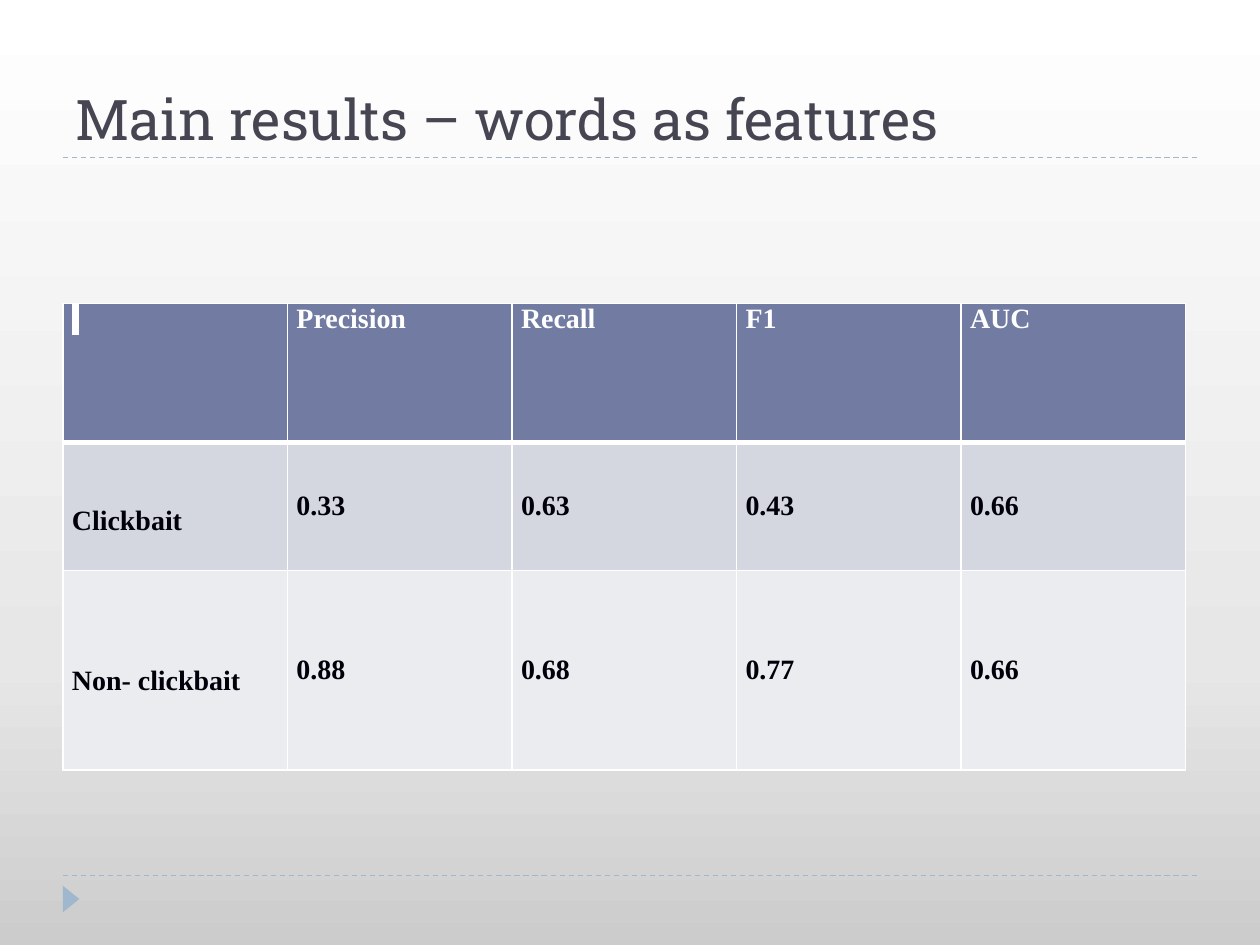
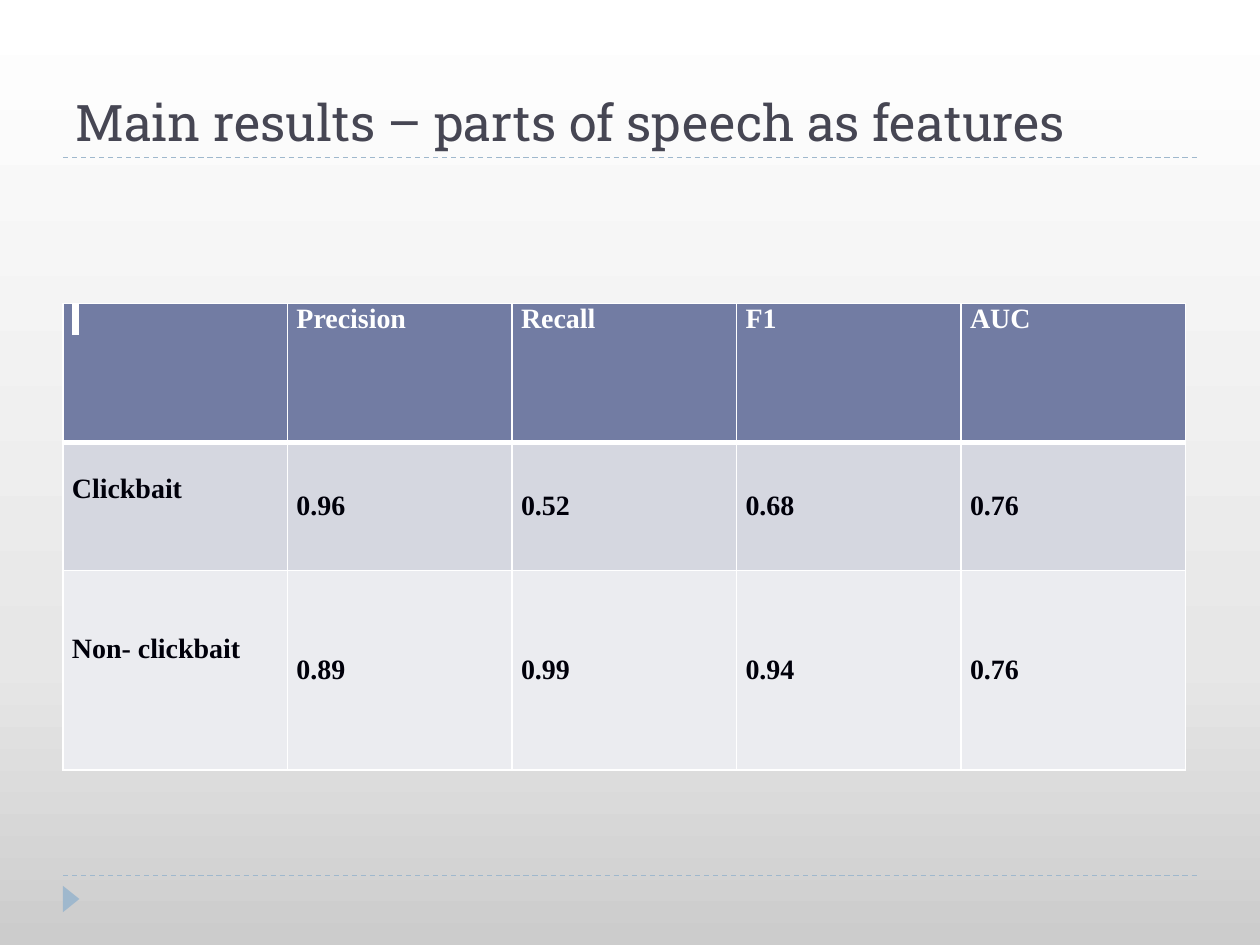
from copy import deepcopy
from dataclasses import dataclass

from lxml import etree
from pptx import Presentation
from pptx.dml.color import RGBColor
from pptx.enum.dml import MSO_LINE
from pptx.enum.shapes import MSO_CONNECTOR, MSO_SHAPE
from pptx.enum.text import MSO_ANCHOR
from pptx.oxml.ns import qn
from pptx.util import Length, Pt

DASH = MSO_LINE.DASH
STRAIGHT = MSO_CONNECTOR.STRAIGHT
TRIANGLE = MSO_SHAPE.ISOSCELES_TRIANGLE
TOP, MIDDLE, BOTTOM = MSO_ANCHOR.TOP, MSO_ANCHOR.MIDDLE, MSO_ANCHOR.BOTTOM

WHITE = RGBColor(0xFF, 0xFF, 0xFF)
TITLE_INK = RGBColor(0x46, 0x46, 0x53)
CELL_INK = RGBColor(0x00, 0x00, 0x0A)
ACCENT = RGBColor(0x9F, 0xB8, 0xCD)
HEADER_FILL = RGBColor(0x72, 0x7C, 0xA3)
ROW_FILLS = (RGBColor(0xD5, 0xD7, 0xE0), RGBColor(0xEB, 0xEC, 0xF0))
BACKGROUND_STOPS = (
    (0.0, RGBColor(0xCC, 0xCC, 0xCC)),
    (0.3, RGBColor(0xE7, 0xE7, 0xE7)),
    (1.0, WHITE),
)

TITLE_FONT = "Roboto Slab"
TABLE_FONT = "Times New Roman"
MARGIN = Pt(36)
CONTENT_WIDTH = Pt(648)
RULE_TOPS = (Pt(90), Pt(500.4))
TABLE_TOP = Pt(173.5)
COLUMN_WIDTH = Pt(128.3)
ROW_HEIGHTS = (Pt(79.2), Pt(73.4), Pt(113.8))
CELL_INSET = Pt(5.15)
LINE_PITCH = Pt(18)
THIN, THICK = Pt(1), Pt(3)
METRICS = ("Precision", "Recall", "F1", "AUC")


@dataclass(frozen=True)
class ClassScores:
    label: str
    lines_above: int
    scores: tuple[str, ...]


@dataclass(frozen=True)
class ResultSlide:
    title: str
    title_size: Length
    classes: tuple[ClassScores, ...]


RESULTS = (
    ResultSlide("Main results – words as features", Pt(32), (
        ClassScores("Clickbait", 2, ("0.33", "0.63", "0.43", "0.66")),
        ClassScores("Non- clickbait", 3, ("0.88", "0.68", "0.77", "0.66")),
    )),
    ResultSlide("Main results – parts of speech as features", Pt(28.8), (
        ClassScores("Clickbait", 1, ("0.96", "0.52", "0.68", "0.76")),
        ClassScores("Non- clickbait", 2, ("0.89", "0.99", "0.94", "0.76")),
    )),
)


def apply_format(target, values: dict) -> None:
    for attribute, value in values.items():
        setattr(target, attribute, value)


def paint_background(slide) -> None:
    fill = slide.background.fill
    fill.gradient()
    fill.gradient_angle = 90
    last_stop = slide.background._cSld.findall(".//" + qn("a:gs"))[-1]
    last_stop.addnext(deepcopy(last_stop))
    for stop, (position, color) in zip(fill.gradient_stops, BACKGROUND_STOPS):
        stop.position = position
        stop.color.rgb = color


def add_frame(slide) -> None:
    """Draw the two dashed rules and the footer marker."""
    for top in RULE_TOPS:
        rule = slide.shapes.add_connector(
            STRAIGHT, MARGIN, top, MARGIN + CONTENT_WIDTH, top)
        rule.line.color.rgb = ACCENT
        apply_format(rule.line, {"width": Pt(0.75), "dash_style": DASH})
        etree.SubElement(rule._element.spPr, qn("a:effectLst"))
    marker = slide.shapes.add_shape(
        TRIANGLE, Pt(33.1), Pt(509), Pt(15.1), Pt(9.4))
    marker.rotation = 90
    marker.shadow.inherit = False
    marker.fill.solid()
    marker.fill.fore_color.rgb = ACCENT
    marker.line.fill.background()


def add_title(slide, text: str, size: Length) -> None:
    title = slide.shapes.add_textbox(MARGIN, Pt(12.2), CONTENT_WIDTH, Pt(77.8))
    frame = title.text_frame
    apply_format(frame, {"word_wrap": True, "vertical_anchor": BOTTOM})
    run = frame.paragraphs[0].add_run()
    run.text = text
    apply_format(run.font, {"name": TITLE_FONT, "size": size})
    run.font.color.rgb = TITLE_INK


def add_border(cell, side: str, width: Length) -> None:
    border = etree.SubElement(
        cell._tc.get_or_add_tcPr(), qn(f"a:ln{side}"), w=str(int(width)))
    fill = etree.SubElement(border, qn("a:solidFill"))
    etree.SubElement(fill, qn("a:srgbClr"), val=str(WHITE))


def highlight(run) -> None:
    """Give the run a white text highlight."""
    mark = etree.Element(qn("a:highlight"))
    etree.SubElement(mark, qn("a:srgbClr"), val=str(WHITE))
    run.font._element.find(qn("a:latin")).addprevious(mark)


def fill_cell(cell, text: str, fill: RGBColor, ink: RGBColor,
              anchor=TOP, inset_top: Length = Pt(0),
              top_border: Length = THIN, bottom_border: Length = THIN):
    for side, width in (("L", THIN), ("R", THIN),
                        ("T", top_border), ("B", bottom_border)):
        add_border(cell, side, width)
    cell.fill.solid()
    cell.fill.fore_color.rgb = fill
    apply_format(cell, {
        "margin_left": CELL_INSET, "margin_right": CELL_INSET,
        "margin_top": inset_top, "margin_bottom": Pt(0),
        "vertical_anchor": anchor,
    })
    run = cell.text_frame.paragraphs[0].add_run()
    run.text = text
    apply_format(run.font, {"name": TABLE_FONT, "size": Pt(16), "bold": True})
    run.font.color.rgb = ink
    return run


def add_score_table(slide, classes: tuple[ClassScores, ...]) -> None:
    column_count = len(METRICS) + 1
    table = slide.shapes.add_table(
        len(ROW_HEIGHTS), column_count, MARGIN, TABLE_TOP,
        COLUMN_WIDTH * column_count, sum(ROW_HEIGHTS)).table
    for column in table.columns:
        column.width = COLUMN_WIDTH
    for row, height in zip(table.rows, ROW_HEIGHTS):
        row.height = height

    header_runs = [
        fill_cell(table.cell(0, column), heading, HEADER_FILL, WHITE,
                  bottom_border=THICK)
        for column, heading in enumerate((" ", *METRICS))
    ]
    highlight(header_runs[0])

    for row, (entry, fill) in enumerate(zip(classes, ROW_FILLS), start=1):
        top_border = THICK if row == 1 else THIN
        fill_cell(table.cell(row, 0), entry.label, fill, CELL_INK,
                  inset_top=LINE_PITCH * entry.lines_above,
                  top_border=top_border)
        for column, score in enumerate(entry.scores, start=1):
            fill_cell(table.cell(row, column), score, fill, CELL_INK,
                      anchor=MIDDLE, top_border=top_border)


def main() -> None:
    deck = Presentation()
    apply_format(deck, {"slide_width": Pt(720), "slide_height": Pt(540)})
    blank = deck.slide_layouts[6]
    for result in RESULTS:
        slide = deck.slides.add_slide(blank)
        paint_background(slide)
        add_frame(slide)
        add_title(slide, result.title, result.title_size)
        add_score_table(slide, result.classes)
    deck.save("out.pptx")


if __name__ == "__main__":
    main()
